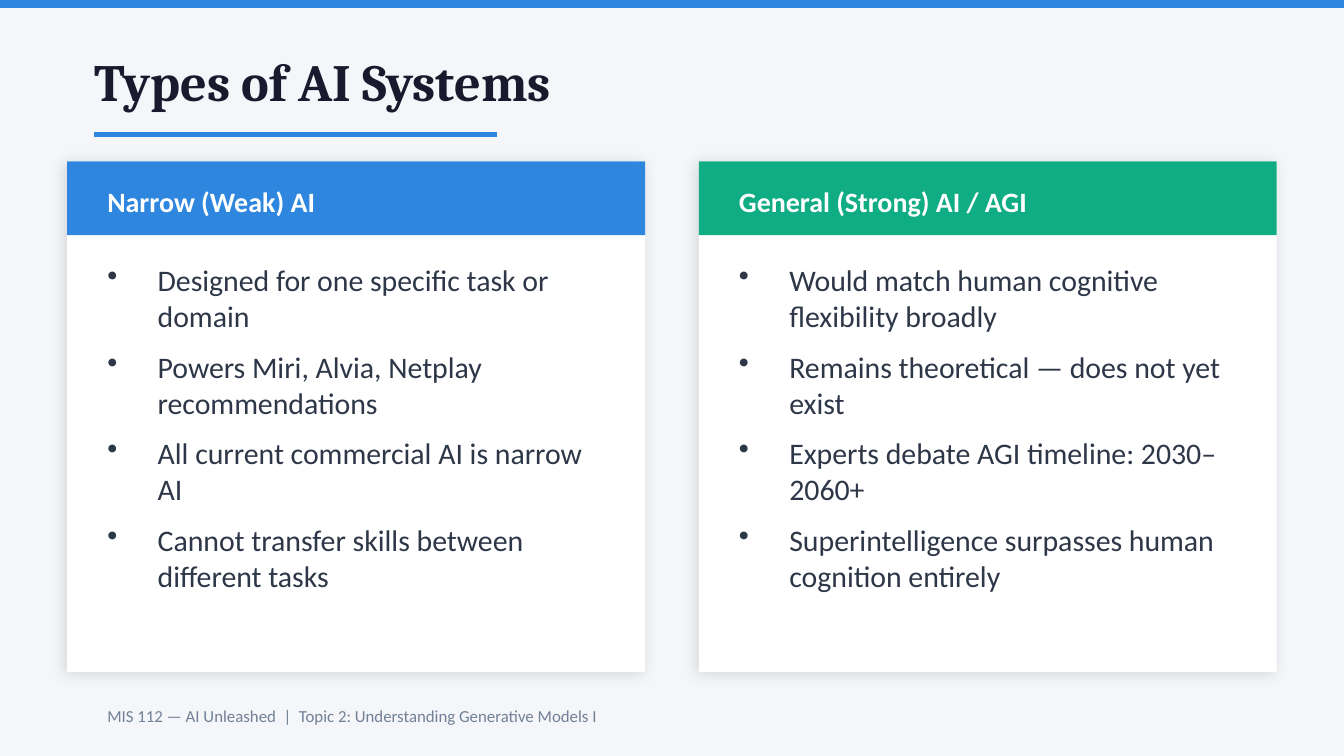
"""Build a slide comparing narrow AI with general AI on two cards."""
import pptx
import pptx.dml.color
import pptx.enum.shapes
import pptx.enum.text
import pptx.oxml
import pptx.oxml.ns
import pptx.util
from lxml import etree

Inches = pptx.util.Inches
Pt = pptx.util.Pt
ANCHOR = pptx.enum.text.MSO_ANCHOR

TITLE = "Types of AI Systems"
FOOTER = "MIS 112 — AI Unleashed  |  Topic 2: Understanding Generative Models I"
CARDS = [
    {
        "heading": "Narrow (Weak) AI",
        "accent": "blue",
        "points": [
            "Designed for one specific task or domain",
            "Powers Miri, Alvia, Netplay recommendations",
            "All current commercial AI is narrow AI",
            "Cannot transfer skills between different tasks",
        ],
    },
    {
        "heading": "General (Strong) AI / AGI",
        "accent": "green",
        "points": [
            "Would match human cognitive flexibility broadly",
            "Remains theoretical — does not yet exist",
            "Experts debate AGI timeline: 2030–2060+",
            "Superintelligence surpasses human cognition entirely",
        ],
    },
]

THEME = {
    "colors": {
        "background": "F4F6F9", "blue": "2E86DE", "green": "10AC84",
        "card": "FFFFFF", "ink": "1A1A2E", "body": "2D3748",
        "muted": "718096", "shadow": "000000",
    },
    "styles": {
        "title": ("Cambria", 28, "ink", True),
        "heading": ("Calibri", 15, "card", True),
        "body": ("Calibri", 16, "body", False),
        "footer": ("Calibri", 9, "muted", False),
    },
}

SLIDE_WIDTH = 10
SLIDE_HEIGHT = SLIDE_WIDTH * 9 / 16
MARGIN, CARD_TOP, CARD_HEIGHT, CARD_GAP = 0.5, 1.2, 3.8, 0.4
CARD_WIDTH = (SLIDE_WIDTH - 2 * MARGIN - CARD_GAP) / len(CARDS)
HEADER_HEIGHT, PADDING = 0.55, 0.2
BULLET_INDENT = Pt(27)
TEXT_LEFT = MARGIN + PADDING
TEXT_WIDTH = SLIDE_WIDTH - 2 * TEXT_LEFT


def color(name):
    return pptx.dml.color.RGBColor.from_string(THEME["colors"][name])


def add_block(slide, box, fill):
    block = slide.shapes.add_shape(
        pptx.enum.shapes.MSO_SHAPE.RECTANGLE, *map(Inches, box))
    block.shadow.inherit = False
    block.fill.solid()
    block.fill.fore_color.rgb = color(fill)
    block.line.fill.background()
    return block


def add_soft_shadow(block):
    effects = block.element.spPr.find(pptx.oxml.ns.qn("a:effectLst"))
    effects.append(pptx.oxml.parse_xml(
        f'<a:outerShdw {pptx.oxml.ns.nsdecls("a")} blurRad="{Pt(8)}" '
        f'dist="{Pt(2)}" dir="{135 * 60000}" algn="bl" rotWithShape="0">'
        f'<a:srgbClr val="{THEME["colors"]["shadow"]}">'
        '<a:alpha val="12000"/></a:srgbClr></a:outerShdw>'))


def add_bullet(paragraph):
    properties = paragraph._p.get_or_add_pPr()
    properties.set("marL", str(BULLET_INDENT))
    properties.set("indent", str(-BULLET_INDENT))
    paragraph.space_after = Pt(8)
    size = etree.SubElement(properties, pptx.oxml.ns.qn("a:buSzPct"))
    size.set("val", "100000")
    bullet = etree.SubElement(properties, pptx.oxml.ns.qn("a:buChar"))
    bullet.set("char", "•")


def add_text(slide, box, lines, style, anchor=ANCHOR.MIDDLE, bulleted=False):
    frame = slide.shapes.add_textbox(*map(Inches, box)).text_frame
    frame.word_wrap = True
    frame.vertical_anchor = anchor
    frame.text = "\n".join(lines)
    family, size, ink, bold = THEME["styles"][style]
    for paragraph in frame.paragraphs:
        if bulleted:
            add_bullet(paragraph)
        for run in paragraph.runs:
            run.font.name = family
            run.font.size = Pt(size)
            run.font.bold = bold
            run.font.color.rgb = color(ink)
    return frame


def add_title(slide):
    frame = add_text(slide, (TEXT_LEFT, 0.25, TEXT_WIDTH, 0.7), [TITLE], "title")
    frame.margin_left = frame.margin_right = 0
    frame.margin_top = frame.margin_bottom = 0
    underline = slide.shapes.add_connector(
        pptx.enum.shapes.MSO_CONNECTOR.STRAIGHT,
        *map(Inches, (TEXT_LEFT, 1, TEXT_LEFT + 3, 1)))
    underline.line.color.rgb = color("blue")
    underline.line.width = Pt(2.5)
    etree.SubElement(underline.element.spPr, pptx.oxml.ns.qn("a:effectLst"))


def add_card(slide, left, card):
    body = add_block(slide, (left, CARD_TOP, CARD_WIDTH, CARD_HEIGHT), "card")
    add_soft_shadow(body)
    add_block(slide, (left, CARD_TOP, CARD_WIDTH, HEADER_HEIGHT), card["accent"])
    inner_left, inner_width = left + PADDING, CARD_WIDTH - 2 * PADDING
    add_text(slide, (inner_left, CARD_TOP + 0.05, inner_width, 0.5),
             [card["heading"]], "heading")
    add_text(slide, (inner_left, CARD_TOP + 0.7, inner_width, 3),
             card["points"], "body", ANCHOR.TOP, bulleted=True)


def main():
    deck = pptx.Presentation()
    deck.slide_width = Inches(SLIDE_WIDTH)
    deck.slide_height = Inches(SLIDE_HEIGHT)
    slide = deck.slides.add_slide(deck.slide_layouts[6])
    slide.background.fill.solid()
    slide.background.fill.fore_color.rgb = color("background")

    add_block(slide, (0, 0, SLIDE_WIDTH, 0.06), "blue")
    add_title(slide)
    for column, card in enumerate(CARDS):
        add_card(slide, MARGIN + column * (CARD_WIDTH + CARD_GAP), card)
    add_text(slide, (TEXT_LEFT, 5.15, TEXT_WIDTH, 0.35), [FOOTER], "footer")
    deck.save("out.pptx")


if __name__ == "__main__":
    main()
